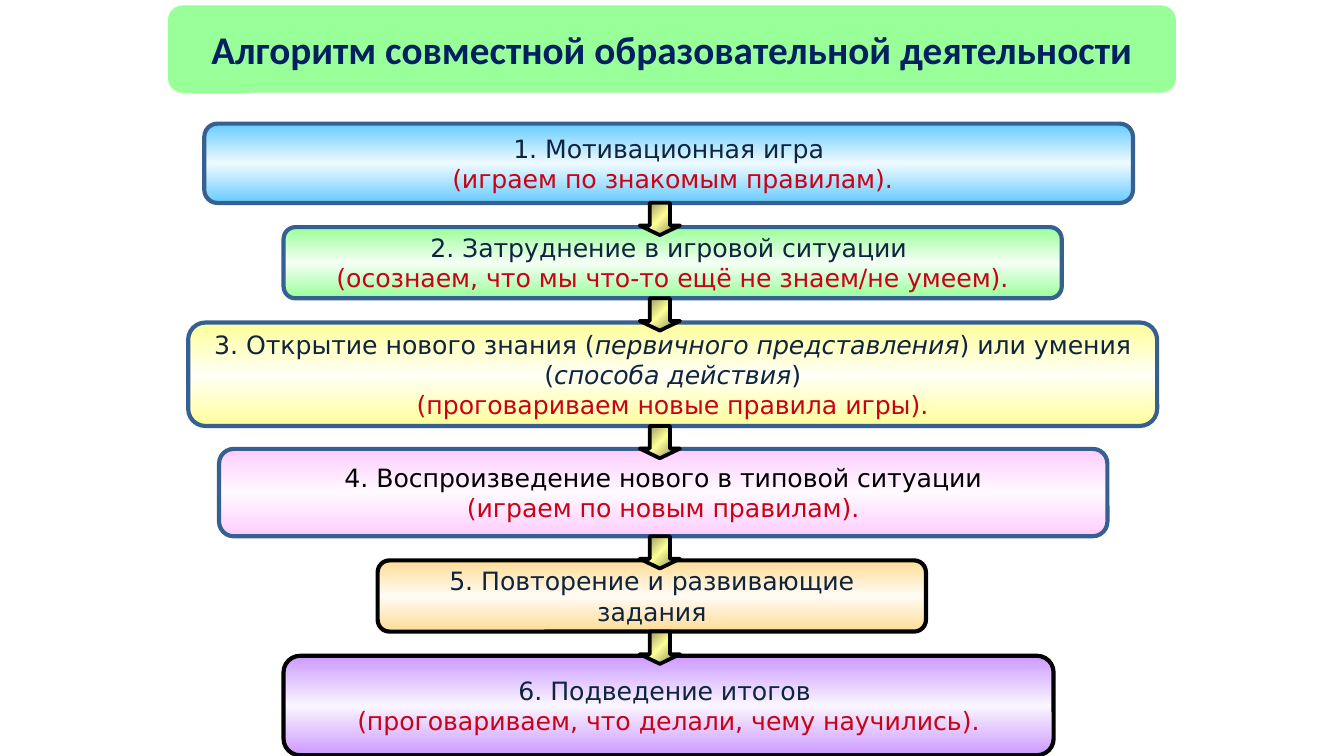
import copy

import pptx
import pptx.dml.color
import pptx.enum.shapes
import pptx.enum.text
import pptx.oxml.ns
import pptx.util

Inches = pptx.util.Inches
Pt = pptx.util.Pt
SHAPES = pptx.enum.shapes.MSO_SHAPE

COLORS = {
    "title_fill": "99FF99", "title_text": "002060",
    "navy": "0F243E", "red": "C90316", "black": "000000", "blue_line": "376092",
    "sky": "66CCFF", "sky_light": "EFFAFF",
    "green": "99FF99", "green_light": "F5FFF5",
    "yellow": "FFFF99", "yellow_light": "FFFFF5",
    "pink": "FFCCFF", "pink_light": "FFFAFF",
    "orange": "FFDC95", "orange_light": "FFFBF4",
    "violet": "CC99FF", "violet_light": "FAF5FF",
    "olive": "767647",
}

# Each step: box, hue, line colour, paragraphs of (text, colour, italic) spans
STEPS = [
    ((1.52, 0.92, 6.91, 0.59), "sky", "blue_line", [
        [("1. Мотивационная игра", "navy", False)],
        [(" ", "navy", False), ("(играем по знакомым правилам).", "red", False)]]),
    ((2.11, 1.69, 5.79, 0.53), "green", "blue_line", [
        [("2. Затруднение в игровой ситуации ", "navy", False)],
        [("(осознаем, что мы что-то ещё не знаем/не умеем).", "red", False)]]),
    ((1.4, 2.4, 7.21, 0.77), "yellow", "blue_line", [
        [("3. Открытие нового знания (", "navy", False),
         ("первичного представления", "navy", True),
         (") или умения (", "navy", False),
         ("способа действия", "navy", True),
         (")", "navy", False)],
        [("(проговариваем новые правила игры).", "red", False)]]),
    ((1.63, 3.34, 6.61, 0.65), "pink", "blue_line", [
        [("4. Воспроизведение нового в типовой ситуации", "black", False)],
        [("(играем по новым правилам).", "red", False)]]),
    ((2.81, 4.17, 4.08, 0.53), "orange", "black", [
        [("5. Повторение и развивающие задания", "navy", False)]]),
    ((2.11, 4.88, 5.73, 0.74), "violet", "black", [
        [("6. Подведение итогов ", "navy", False)],
        [("(проговариваем, что делали, чему научились).", "red", False)]]),
]


def rgb(name):
    return pptx.dml.color.RGBColor.from_string(COLORS[name])


def add_shape(page, kind, box, line=None, line_width=0):
    shape = page.shapes.add_shape(kind, *[Inches(length) for length in box])
    shape.shadow.inherit = False
    if line:
        shape.line.color.rgb = rgb(line)
        shape.line.width = Pt(line_width)
    else:
        shape.line.fill.background()
    return shape


def fill_gradient(shape, edge, middle, angle):
    """Fill with edge, middle and edge colours; angle is counter-clockwise."""
    shape.fill.gradient()
    shape.fill.gradient_angle = angle
    stop_list = shape.element.spPr.find(".//" + pptx.oxml.ns.qn("a:gsLst"))
    stop_list.insert(1, copy.deepcopy(stop_list[0]))
    stops = shape.fill.gradient_stops
    for stop, position, color in zip(stops, (0, 0.5, 1), (edge, middle, edge)):
        stop.position = position
        stop.color.rgb = rgb(color)


def write_text(shape, paragraphs, font, size, bold=False):
    frame = shape.text_frame
    frame.word_wrap = True
    frame.vertical_anchor = pptx.enum.text.MSO_ANCHOR.MIDDLE
    frame.margin_left = frame.margin_right = Inches(0.08)
    frame.margin_top = frame.margin_bottom = Inches(0.04)
    for index, spans in enumerate(paragraphs):
        para = frame.add_paragraph() if index else frame.paragraphs[0]
        para.alignment = pptx.enum.text.PP_ALIGN.CENTER
        for text, color, italic in spans:
            span = para.add_run()
            span.text = text
            span.font.name = font
            span.font.size = Pt(size)
            span.font.bold = bold
            span.font.italic = italic
            span.font.color.rgb = rgb(color)


def add_title(page, box):
    banner = add_shape(page, SHAPES.ROUNDED_RECTANGLE, box)
    banner.fill.solid()
    banner.fill.fore_color.rgb = rgb("title_fill")
    title = "Алгоритм совместной образовательной деятельности"
    write_text(banner, [[(title, "title_text", False)]], "Calibri", 21, bold=True)


def add_step(page, box, hue, line, paragraphs):
    step = add_shape(page, SHAPES.ROUNDED_RECTANGLE, box, line, 2.25)
    fill_gradient(step, hue, hue + "_light", 270)
    write_text(step, paragraphs, "DejaVu Sans", 13.5)


def add_arrow(page, box):
    arrow = add_shape(page, SHAPES.DOWN_ARROW, box, "black", 2)
    arrow.adjustments[0] = 0.5
    arrow.adjustments[1] = 0.3
    fill_gradient(arrow, "olive", "yellow", 315)


def main():
    deck = pptx.Presentation()
    # Widescreen, 16 by 9
    deck.slide_width = Inches(10)
    deck.slide_height = deck.slide_width * 9 // 16
    page = deck.slides.add_slide(deck.slide_layouts[6])

    # Steps from top to bottom
    for step in STEPS:
        add_step(page, *step)

    # An arrow from the bottom edge of each step but the last
    for (left, top, width, height), *rest in STEPS[:-1]:
        add_arrow(page, (4.76, top + height, 0.3, 0.24))

    add_title(page, (1.25, 0.04, 7.5, 0.65))
    deck.save("out.pptx")


if __name__ == "__main__":
    main()
